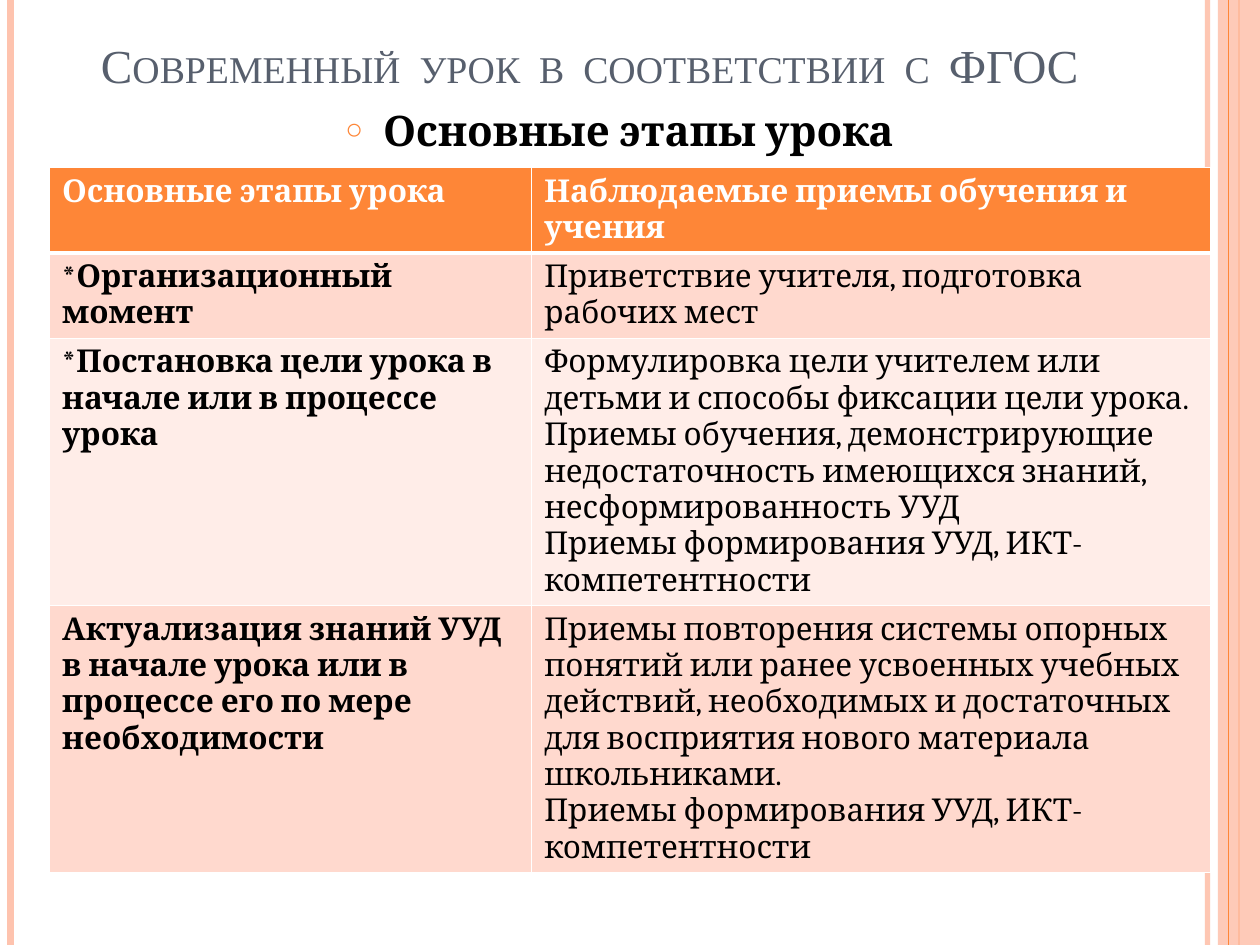
from lxml import etree
from pptx import Presentation
from pptx.dml.color import RGBColor
from pptx.enum.shapes import MSO_CONNECTOR, MSO_SHAPE
from pptx.enum.text import MSO_ANCHOR, MSO_AUTO_SIZE, PP_ALIGN
from pptx.oxml.ns import qn
from pptx.util import Pt

STRAIGHT = MSO_CONNECTOR.STRAIGHT
RECTANGLE = MSO_SHAPE.RECTANGLE
TOP, BOTTOM = MSO_ANCHOR.TOP, MSO_ANCHOR.BOTTOM
NO_FIT = MSO_AUTO_SIZE.NONE
LEFT, CENTER = PP_ALIGN.LEFT, PP_ALIGN.CENTER

WHITE = RGBColor(0xFF, 0xFF, 0xFF)
BLACK = RGBColor(0x00, 0x00, 0x00)
SLATE = RGBColor(0x57, 0x5F, 0x6D)
ORANGE = RGBColor(0xFE, 0x86, 0x37)
PEACH = RGBColor(0xFE, 0xC3, 0xAE)
BAND_DARK = RGBColor(0xFF, 0xD9, 0xCE)
BAND_LIGHT = RGBColor(0xFF, 0xED, 0xE8)

WIDTH, HEIGHT = 720, 540
SKILLS = "Приемы формирования УУД, ИКТ-компетентности"
ROWS = [
    ("Основные этапы урока", ["Наблюдаемые приемы обучения и учения"]),
    ("*Организационный момент", ["Приветствие учителя, подготовка рабочих мест"]),
    ("*Постановка цели урока в начале или в процессе урока",
     ["Формулировка цели учителем или детьми и способы фиксации цели урока. "
      "Приемы обучения, демонстрирующие недостаточность имеющихся знаний, "
      "несформированность УУД", SKILLS]),
    ("Актуализация знаний УУД в начале урока или в процессе его по мере необходимости",
     ["Приемы повторения системы опорных понятий или ранее усвоенных учебных "
      "действий, необходимых и достаточных для восприятия нового материала "
      "школьниками.", SKILLS]),
]
ROW_HEIGHTS = [48, 48, 152, 152]
COLUMN_WIDTHS = [275.5, 388]


def write(paragraph, text, font="Cambria", size=18, color=BLACK, bold=False,
          align=LEFT, small_caps=False):
    paragraph.alignment = align
    run = paragraph.add_run()
    run.text = text
    run.font.name = font
    run.font.size = Pt(size)
    run.font.color.rgb = color
    run.font.bold = bold
    if small_caps:
        run.font._element.set("cap", "small")


def set_opacity(element, percent):
    color = next(element.iter(qn("a:srgbClr")))
    etree.SubElement(color, qn("a:alpha"), val=str(percent * 1000))


class SlideBuilder:
    def __init__(self, presentation):
        self.slide = presentation.slides.add_slide(presentation.slide_layouts[1])

    def place(self, shape, left, top, width, height, anchor):
        shape.left, shape.top = Pt(left), Pt(top)
        shape.width, shape.height = Pt(width), Pt(height)
        frame = shape.text_frame
        frame.auto_size = NO_FIT
        frame.vertical_anchor = anchor
        return frame.paragraphs[0]

    def title(self, text):
        paragraph = self.place(self.slide.shapes.title, 50.5, 16.5, 624, 40, BOTTOM)
        write(paragraph, text, font="Times New Roman", size=27, color=SLATE,
              small_caps=True)

    def bullet(self, text):
        paragraph = self.place(self.slide.placeholders[1], 16.5, 56, 675, 466, TOP)
        write(paragraph, text, size=24, bold=True, align=CENTER)
        paragraph.space_before = Pt(6)
        properties = paragraph._p.get_or_add_pPr()
        properties.set("marL", str(Pt(21.6)))
        properties.set("indent", str(-Pt(21.6)))
        color = etree.SubElement(properties, qn("a:buClr"))
        etree.SubElement(color, qn("a:srgbClr"), val=str(ORANGE))
        etree.SubElement(properties, qn("a:buSzPct"), val="70000")
        etree.SubElement(properties, qn("a:buChar"), char="○")

    def vertical_line(self, x, color, width, opacity=100):
        line = self.slide.shapes.add_connector(STRAIGHT, Pt(x), 0, Pt(x), Pt(HEIGHT))
        line.line.color.rgb = color
        line.line.width = Pt(width)
        properties = line._element.spPr
        if opacity < 100:
            set_opacity(properties, opacity)
        etree.SubElement(properties, qn("a:effectLst"))

    def side_band(self, left, color, opacity):
        band = self.slide.shapes.add_shape(RECTANGLE, Pt(left), 0, Pt(WIDTH - left), Pt(HEIGHT))
        band.shadow.inherit = False
        band.fill.solid()
        band.fill.fore_color.rgb = color
        band.line.fill.background()
        set_opacity(band._element.spPr, opacity)

    def borders(self, cell, top, bottom):
        properties = cell._tc.get_or_add_tcPr()
        widths = {"lnL": 1, "lnR": 1, "lnT": top, "lnB": bottom}
        for index, (side, width) in enumerate(widths.items()):
            border = etree.Element(qn(f"a:{side}"), w=str(Pt(width)))
            fill = etree.SubElement(border, qn("a:solidFill"))
            etree.SubElement(fill, qn("a:srgbClr"), val=str(WHITE))
            properties.insert(index, border)

    def cell(self, cell, texts, fill, color, bold):
        cell.fill.solid()
        cell.fill.fore_color.rgb = fill
        frame = cell.text_frame
        for index, text in enumerate(texts):
            paragraph = frame.add_paragraph() if index else frame.paragraphs[0]
            write(paragraph, text, color=color, bold=bold)

    def table(self, left, top):
        table = self.slide.shapes.add_table(
            len(ROWS), len(COLUMN_WIDTHS), Pt(left), Pt(top),
            Pt(sum(COLUMN_WIDTHS)), Pt(sum(ROW_HEIGHTS))).table
        for column, width in zip(table.columns, COLUMN_WIDTHS):
            column.width = Pt(width)
        for index, (stage, methods) in enumerate(ROWS):
            table.rows[index].height = Pt(ROW_HEIGHTS[index])
            header = index == 0
            band = BAND_DARK if index % 2 else BAND_LIGHT
            for column, texts in enumerate([[stage], methods]):
                cell = table.cell(index, column)
                self.cell(cell, texts, ORANGE if header else band,
                          WHITE if header else BLACK, header or column == 0)
                self.borders(cell, 3 if index == 1 else 1, 3 if header else 1)


def main():
    presentation = Presentation()
    presentation.slide_width, presentation.slide_height = Pt(WIDTH), Pt(HEIGHT)
    builder = SlideBuilder(presentation)
    builder.vertical_line(690, PEACH, 3, opacity=93)
    builder.vertical_line(6, PEACH, 4.5)
    builder.vertical_line(708, ORANGE, 1.5)
    builder.side_band(696, PEACH, 87)
    builder.vertical_line(702, ORANGE, 0.75)
    builder.bullet("Основные этапы урока")
    builder.title("Современный  урок  в  соответствии  с  ФГОС")
    builder.table(28.35, 95.75)
    presentation.save("out.pptx")


if __name__ == "__main__":
    main()
